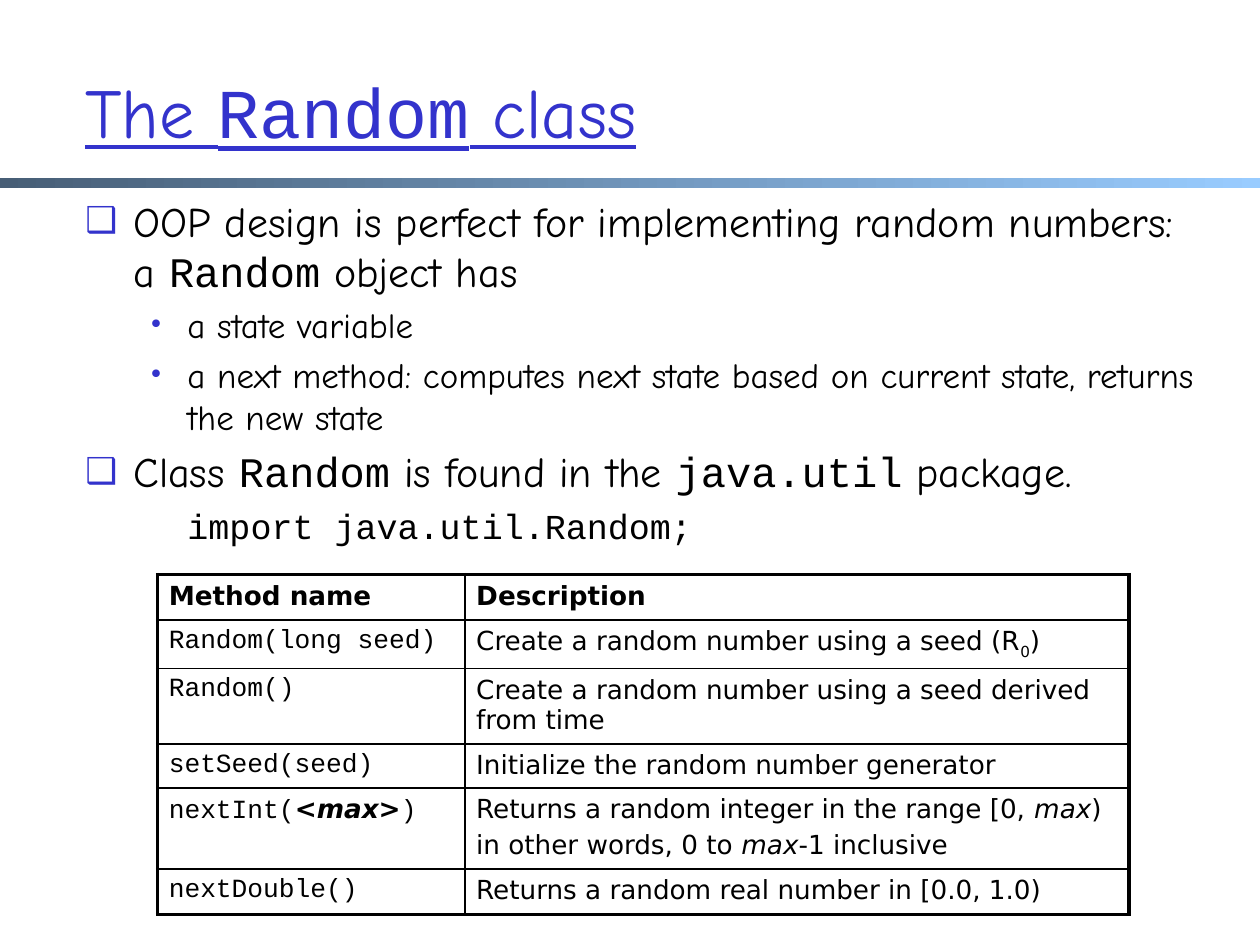
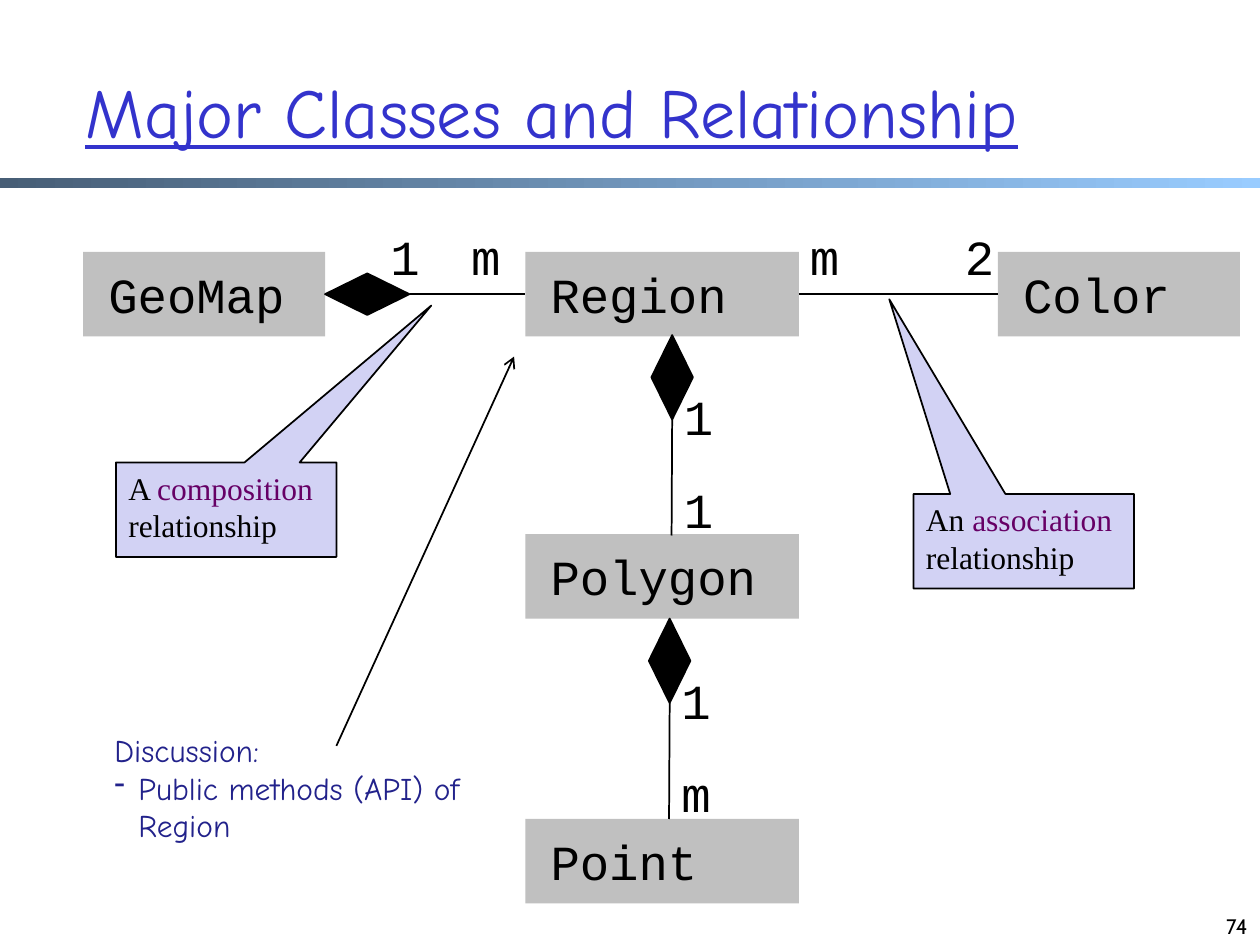
from lxml.etree import SubElement
from pptx import Presentation
from pptx.dml.color import RGBColor
from pptx.enum.shapes import MSO_CONNECTOR as Connector, MSO_SHAPE as Shape
from pptx.enum.text import MSO_ANCHOR as Anchor, PP_ALIGN as Align
from pptx.oxml.ns import qn
from pptx.util import Pt

EMU_PER_PX = 9144
COLORS = {
    "title": "3333CC", "text": "000000", "band_start": "475E76", "band_end": "99CCFF",
    "class_box": "C0C0C0", "callout": "D2D2F4", "term": "660066", "note": "22228B",
}
HAND, MONO, SANS, SERIF = "Comic Neue", "Courier New", "DejaVu Sans", "Times New Roman"
CODE = {"font": MONO}
ITALIC = {"italic": True}
TERM = {"color": "term"}
SQUARE = {"margin": 38, "indent": -38, "bullet": "❑", "bullet_size": 85, "bullet_font": SANS}
DOT = {"margin": 81, "indent": -31, "bullet": "•", "bullet_size": 75}
DASH = {"margin": 19, "indent": -19, "bullet": "-"}
TOP, LEFT, BOTTOM, RIGHT = range(4)


def px(length):
    """Turn a length in px into EMU."""
    return round(length * EMU_PER_PX)


def rgb(name):
    """Look up a named colour."""
    return RGBColor.from_string(COLORS[name])


def write(paragraph, text, font=HAND, size=18, color="text", bold=False,
          italic=False, underline=False, baseline=0):
    """Add one formatted run to a paragraph."""
    run = paragraph.add_run()
    run.text = text
    run.font.name, run.font.size = font, Pt(size)
    run.font.bold, run.font.italic, run.font.underline = bold, italic, underline
    run.font.color.rgb = rgb(color)
    if baseline:
        run.font._element.set("baseline", str(baseline * 1000))


def set_bullet(paragraph, margin, indent=0, bullet=None, bullet_size=100,
               bullet_font=None, bullet_color="title"):
    """Set the hanging indent and the bullet of a paragraph."""
    properties = paragraph._p.get_or_add_pPr()
    properties.set("marL", str(px(margin)))
    properties.set("indent", str(px(indent)))
    if not bullet:
        return
    color = SubElement(properties, qn("a:buClr"))
    SubElement(color, qn("a:srgbClr"), val=COLORS[bullet_color])
    SubElement(properties, qn("a:buSzPct"), val=str(bullet_size * 1000))
    if bullet_font:
        SubElement(properties, qn("a:buFont"), typeface=bullet_font)
    SubElement(properties, qn("a:buChar"), char=bullet)


class Deck:
    """Hold the shared style and the current slide."""

    def __init__(self):
        """Start an empty presentation."""
        self.presentation = Presentation()
        self.presentation.slide_width = px(1000)
        self.presentation.slide_height = px(750)
        self.slide = None

    def add_slide(self, *title):
        """Add a slide with the gradient band and an underlined title."""
        self.slide = self.presentation.slides.add_slide(self.presentation.slide_layouts[6])
        band = self.shape(Shape.RECTANGLE, 0, 141, 1000, 8)
        band.fill.gradient()
        band.fill.gradient_angle = 0
        for stop, position, color in zip(band.fill.gradient_stops, (0, 1),
                                         ("band_start", "band_end")):
            stop.position, stop.color.rgb = position, rgb(color)
        self.text(58, 25, 850, 125, [title], anchor=Anchor.MIDDLE,
                  size=40, color="title", underline=True)

    def fill_frame(self, frame, paragraphs, space=0, align=Align.LEFT,
                   anchor=Anchor.TOP, inset=(10, 5), **style):
        """Fill a text frame with paragraphs, each a list of strings or (text, format) pairs."""
        frame.word_wrap = True
        frame.vertical_anchor = anchor
        frame.margin_left = frame.margin_right = px(inset[0])
        frame.margin_top = frame.margin_bottom = px(inset[1])
        for index, runs in enumerate(paragraphs):
            paragraph = frame.add_paragraph() if index else frame.paragraphs[0]
            paragraph.alignment = align
            if index and space:
                paragraph.space_before = Pt(space)
            for run in runs:
                text, changes = (run, {}) if isinstance(run, str) else run
                write(paragraph, text, **{**style, **changes})

    def text(self, left, top, width, height, paragraphs, **style):
        """Add a text box."""
        box = self.slide.shapes.add_textbox(px(left), px(top), px(width), px(height))
        self.fill_frame(box.text_frame, paragraphs, **style)
        return box

    def shape(self, kind, left, top, width, height, fill=None, outline=None):
        """Add a preset shape without a shadow."""
        shape = self.slide.shapes.add_shape(kind, px(left), px(top), px(width), px(height))
        shape.shadow.inherit = False
        if fill:
            shape.fill.solid()
            shape.fill.fore_color.rgb = rgb(fill)
        if outline:
            shape.line.color.rgb = rgb(outline)
            shape.line.width = Pt(1)
        else:
            shape.line.fill.background()
        return shape

    def line(self, start=(0, 0), end=(0, 0), begin_at=None, end_at=None, arrow=False):
        """Add a thin line between points or (shape, side) joints."""
        line = self.slide.shapes.add_connector(Connector.STRAIGHT, *map(px, start + end))
        if begin_at:
            line.begin_connect(*begin_at)
        if end_at:
            line.end_connect(*end_at)
        line.line.color.rgb = rgb("text")
        line.line.width = Pt(1)
        properties = line._element.spPr
        if arrow:
            SubElement(properties.find(qn("a:ln")), qn("a:tailEnd"), type="arrow")
        SubElement(properties, qn("a:effectLst"))

    def class_box(self, name, left, top, width):
        """Add a grey box with a class name."""
        box = self.shape(Shape.RECTANGLE, left, top, width, 67, "class_box")
        self.fill_frame(box.text_frame, [[name]], inset=(20, 10), font=MONO, size=28)
        return box

    def diamond(self, left, top, width, height):
        """Add the black diamond that marks a composition."""
        return self.shape(Shape.DIAMOND, left, top, width, height, "text", "text")

    def multiplicity(self, label, left, top):
        """Add the label at one end of a relationship."""
        self.text(left, top, 44, 57, [[label]], font=MONO, size=28)

    def composition_down(self, x, top, first, last):
        """Add a vertical composition with its two multiplicities."""
        diamond = self.diamond(x - 16, top, 33, 67)
        self.line(end=(x, top + 159), begin_at=(diamond, BOTTOM))
        self.multiplicity(first, x, top + 36)
        self.multiplicity(last, x, top + 110)

    def callout(self, left, top, tip, runs):
        """Add a callout whose tip is given relative to its size."""
        callout = self.shape(Shape.RECTANGULAR_CALLOUT, left, top, 175, 75, "callout", "text")
        callout.adjustments[0], callout.adjustments[1] = tip
        self.fill_frame(callout.text_frame, [runs], font=SERIF)

    def table(self, left, top, widths, heights, rows):
        """Add a plain table with thick outer and thin inner borders."""
        frame = self.slide.shapes.add_table(len(rows), len(widths), px(left), px(top),
                                            px(sum(widths)), px(sum(heights)))
        table = frame.table
        table.first_row = table.horz_banding = False
        for column, width in zip(table.columns, widths):
            column.width = px(width)
        for row, height in zip(table.rows, heights):
            row.height = px(height)
        for y, row in enumerate(rows):
            for x, paragraphs in enumerate(row):
                cell = table.cell(y, x)
                outer = {"L": x == 0, "R": x == len(widths) - 1,
                         "T": y == 0, "B": y == len(rows) - 1}
                self.borders(cell, outer)
                cell.fill.background()
                self.fill_frame(cell.text_frame, paragraphs, space=3, size=15,
                                font=SANS if x or not y else MONO, bold=y == 0)
                cell.margin_left = cell.margin_right = px(9)
                cell.margin_top = cell.margin_bottom = px(5)

    def borders(self, cell, outer):
        """Draw the four borders of a cell, thick on outer sides."""
        properties = cell._tc.get_or_add_tcPr()
        for side, thick in outer.items():
            border = SubElement(properties, qn(f"a:ln{side}"), w=str(Pt(2.25 if thick else 1)))
            fill = SubElement(border, qn("a:solidFill"))
            SubElement(fill, qn("a:srgbClr"), val=COLORS["text"])


def random_class_slide(deck):
    """Build the slide on the Random class."""
    deck.add_slide("The ", ("Random", CODE), " class")
    small = {"size": 20}
    points = [
        (SQUARE, ["OOP design is perfect for implementing random numbers: a ",
                  ("Random", CODE), " object has"]),
        (DOT, [("a state variable", small)]),
        (DOT, [("a next method: computes next state based on current state, "
                "returns the new state", small)]),
        (SQUARE, ["Class ", ("Random", CODE), " is found in the ",
                  ("java.util", CODE), " package."]),
        ({"margin": 81}, [("import java.util.Random;", {**CODE, **small})]),
    ]
    body = deck.text(58, 150, 900, 508, [runs for _, runs in points], space=4.5, size=24)
    for paragraph, (bullet, _) in zip(body.text_frame.paragraphs, points):
        set_bullet(paragraph, **bullet)

    maximum = ("<max>", {"font": SANS, "bold": True, "italic": True})
    deck.table(125, 456, (244, 527), (36, 37, 58, 34, 63, 36), [
        ([["Method name"]], [["Description"]]),
        ([["Random(long seed)"]],
         [["Create a random number using a seed (R", ("0", {"baseline": -25}), ")"]]),
        ([["Random()"]], [["Create a random number using a seed derived from time"]]),
        ([["setSeed(seed)"]], [["Initialize the random number generator"]]),
        ([["nextInt(", maximum, ")"]],
         [["Returns a random integer in the range [0, ", ("max", ITALIC), ")"],
          ["in other words, 0 to ", ("max", ITALIC), "-1 inclusive"]]),
        ([["nextDouble()"]], [["Returns a random real number in [0.0, 1.0)"]]),
    ])


def relationship_slide(deck):
    """Build the class diagram slide."""
    deck.add_slide("Major Classes and Relationship")
    deck.text(767, 700, 233, 50, [["74"]], anchor=Anchor.BOTTOM, align=Align.RIGHT,
              font="Cabin", size=12)
    deck.class_box("GeoMap", 66, 200, 192)
    region = deck.class_box("Region", 417, 200, 217)
    deck.class_box("Polygon", 417, 424, 217)
    color = deck.class_box("Color", 792, 200, 192)
    deck.class_box("Point", 417, 650, 217)

    diamond = deck.diamond(258, 217, 67, 33)
    deck.line(begin_at=(diamond, RIGHT), end_at=(region, LEFT))
    deck.line(begin_at=(region, RIGHT), end_at=(color, LEFT))
    for label, left in (("1", 300), ("m", 364), ("m", 633), ("2", 756)):
        deck.multiplicity(label, left, 175)
    deck.composition_down(533, 266, "1", "1")
    deck.composition_down(531, 491, "1", "m")

    deck.callout(92, 367, (0.93, -2.16), ["A ", ("composition", TERM), " relationship"])
    deck.callout(725, 392, (-0.61, -2.56), ["An ", ("association ", TERM), "relationship"])
    discussion = deck.text(81, 575, 302, 101,
                           [["Discussion:"], ["Public methods (API) of Region"]], color="note")
    set_bullet(discussion.text_frame.paragraphs[1], bullet_color="note", **DASH)
    deck.line((267, 592), (408, 283), arrow=True)


def main():
    """Build and save the presentation."""
    deck = Deck()
    random_class_slide(deck)
    relationship_slide(deck)
    deck.presentation.save("out.pptx")


if __name__ == "__main__":
    main()
